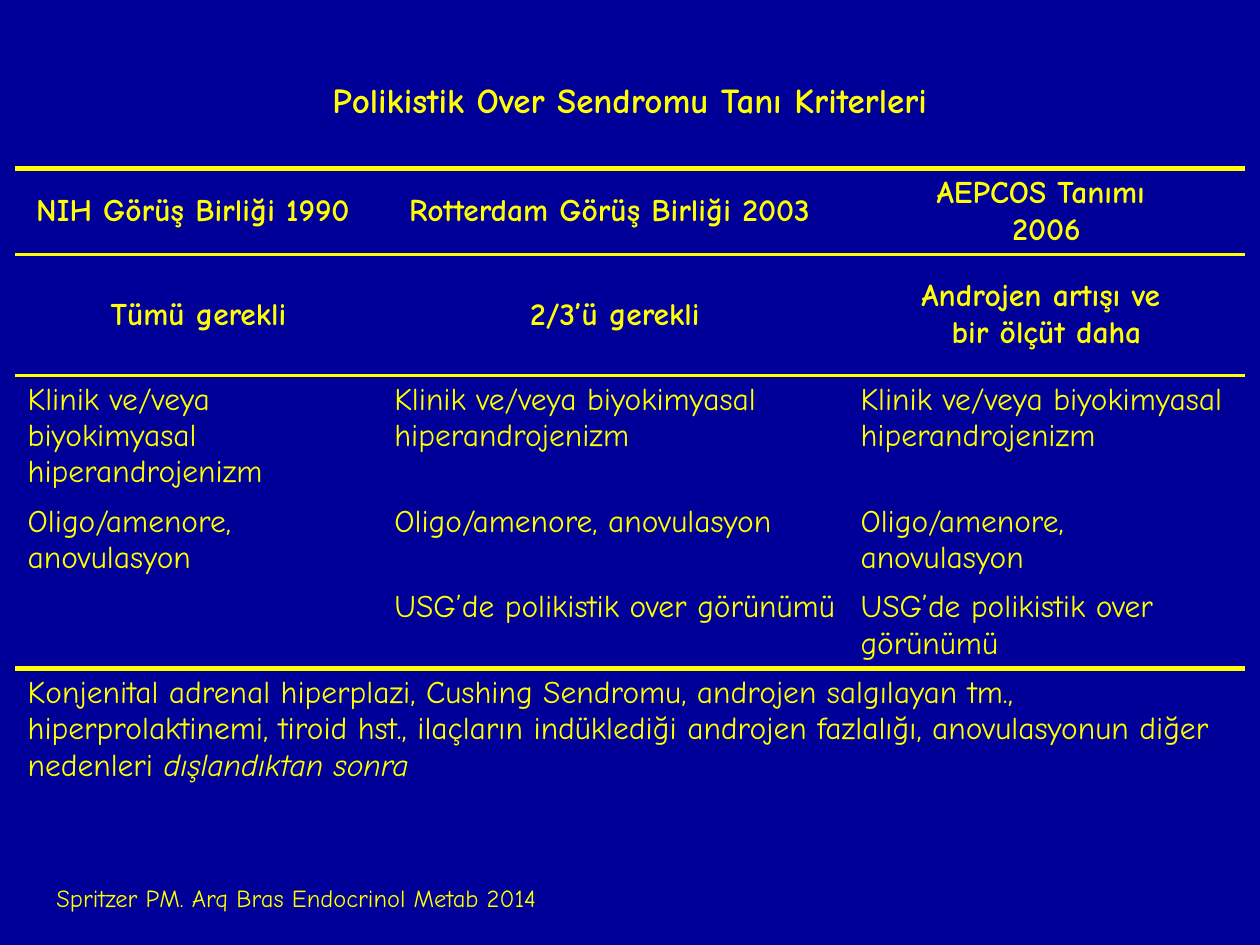
import pptx
import pptx.util
import pptx.dml.color
import pptx.enum.text
import pptx.oxml.ns
import lxml.etree

Inches = pptx.util.Inches
Pt = pptx.util.Pt
ALIGN = pptx.enum.text.PP_ALIGN
ANCHOR = pptx.enum.text.MSO_ANCHOR
COLORS = {"back": "000099", "text": "FFFF00"}
FONT = "Comic Neue"

WIDTHS = [2.91, 3.7, 3.15]
HEIGHTS = [0.74, 0.68, 0.96, 0.97, 0.68, 0.67, 0.97, 0.9]
RULES = {1: 3, 2: 1.5, 3: 1.5, 6: 3}
SPANS = [0, 6]
SIGN = "Klinik ve/veya biyokimyasal hiperandrojenizm"
CYCLE = "Oligo/amenore, anovulasyon"
SCAN = "USG’de polikistik over görünümü"
CAUSES = (
    "Konjenital adrenal hiperplazi, Cushing Sendromu, androjen salgılayan tm., "
    "hiperprolaktinemi, tiroid hst., ilaçların indüklediği androjen fazlalığı, "
    "anovulasyonun diğer nedenleri "
)
ROWS = [
    ["Polikistik Over Sendromu Tanı Kriterleri"],
    ["NIH Görüş Birliği 1990 ", "Rotterdam Görüş Birliği 2003 ", "AEPCOS Tanımı \n2006"],
    ["Tümü gerekli", "2/3’ü gerekli", "Androjen artışı ve \nbir ölçüt daha"],
    [SIGN] * 3,
    [CYCLE] * 3,
    ["", SCAN, SCAN],
    [CAUSES],
    [],
]
TITLE = {"size": Pt(20), "bold": True}
HEAD = {"size": Pt(18), "bold": True}
BODY = {"size": Pt(18), "bold": False}
NOTE = {"size": Pt(14), "bold": False}


class Deck:
    def __init__(self):
        self.file = pptx.Presentation()
        self.file.slide_width = Inches(10)
        self.file.slide_height = Inches(7.5)
        self.slide = self.file.slides.add_slide(self.file.slide_layouts[6])
        fill = self.slide.background.fill
        fill.solid()
        fill.fore_color.rgb = self.color("back")

    def color(self, name):
        return pptx.dml.color.RGBColor.from_string(COLORS[name])

    def run(self, para, text, style):
        run = para.add_run()
        run.text = text
        for key, value in {"name": FONT, **style}.items():
            setattr(run.font, key, value)
        run.font.color.rgb = self.color("text")

    def lines(self, frame, text, style, align=ALIGN.LEFT):
        for i, line in enumerate(text.split("\n")):
            para = frame.add_paragraph() if i else frame.paragraphs[0]
            para.alignment = align
            self.run(para, line, style)

    def edge(self, cell, side, width):
        qn = pptx.oxml.ns.qn
        line = lxml.etree.SubElement(cell._tc.get_or_add_tcPr(), qn("a:ln" + side))
        if not width:
            lxml.etree.SubElement(line, qn("a:noFill"))
            return
        line.set("w", str(Pt(width)))
        fill = lxml.etree.SubElement(line, qn("a:solidFill"))
        lxml.etree.SubElement(fill, qn("a:srgbClr")).set("val", COLORS["text"])

    def table(self, left, top):
        shape = self.slide.shapes.add_table(
            len(HEIGHTS), len(WIDTHS), Inches(left), Inches(top),
            Inches(sum(WIDTHS)), Inches(sum(HEIGHTS)))
        grid = shape.table
        grid.first_row = grid.horz_banding = False
        for col, width in zip(grid.columns, WIDTHS):
            col.width = Inches(width)
        for r, height in enumerate(HEIGHTS):
            grid.rows[r].height = Inches(height)
            for cell in grid.rows[r].cells:
                edges = {"L": 0, "R": 0, "T": RULES.get(r, 0), "B": RULES.get(r + 1, 0)}
                for side, width in edges.items():
                    self.edge(cell, side, width)
                cell.fill.background()
                cell.vertical_anchor = ANCHOR.MIDDLE if r in (1, 2) else ANCHOR.TOP
            if r in SPANS:
                grid.cell(r, 0).merge(grid.cell(r, len(WIDTHS) - 1))
            style = TITLE if r == 0 else HEAD if r < 3 else BODY
            align = ALIGN.CENTER if r < 3 else ALIGN.LEFT
            for c, text in enumerate(ROWS[r]):
                if text:
                    self.lines(grid.cell(r, c).text_frame, text, style, align)
        return grid

    def label(self, text, left, top, width, height):
        box = self.slide.shapes.add_textbox(
            Inches(left), Inches(top), Inches(width), Inches(height))
        box.text_frame.word_wrap = True
        box.text_frame.auto_size = pptx.enum.text.MSO_AUTO_SIZE.SHAPE_TO_FIT_TEXT
        self.lines(box.text_frame, text, NOTE)


def main():
    deck = Deck()
    grid = deck.table(0.12, 0.6)
    last = grid.cell(6, 0).text_frame.paragraphs[0]
    deck.run(last, "dışlandıktan sonra", {**BODY, "italic": True})
    deck.label("Spritzer PM. Arq Bras Endocrinol Metab 2014", 0.35, 6.96, 9.37, 0.34)
    deck.file.save("out.pptx")


if __name__ == "__main__":
    main()
